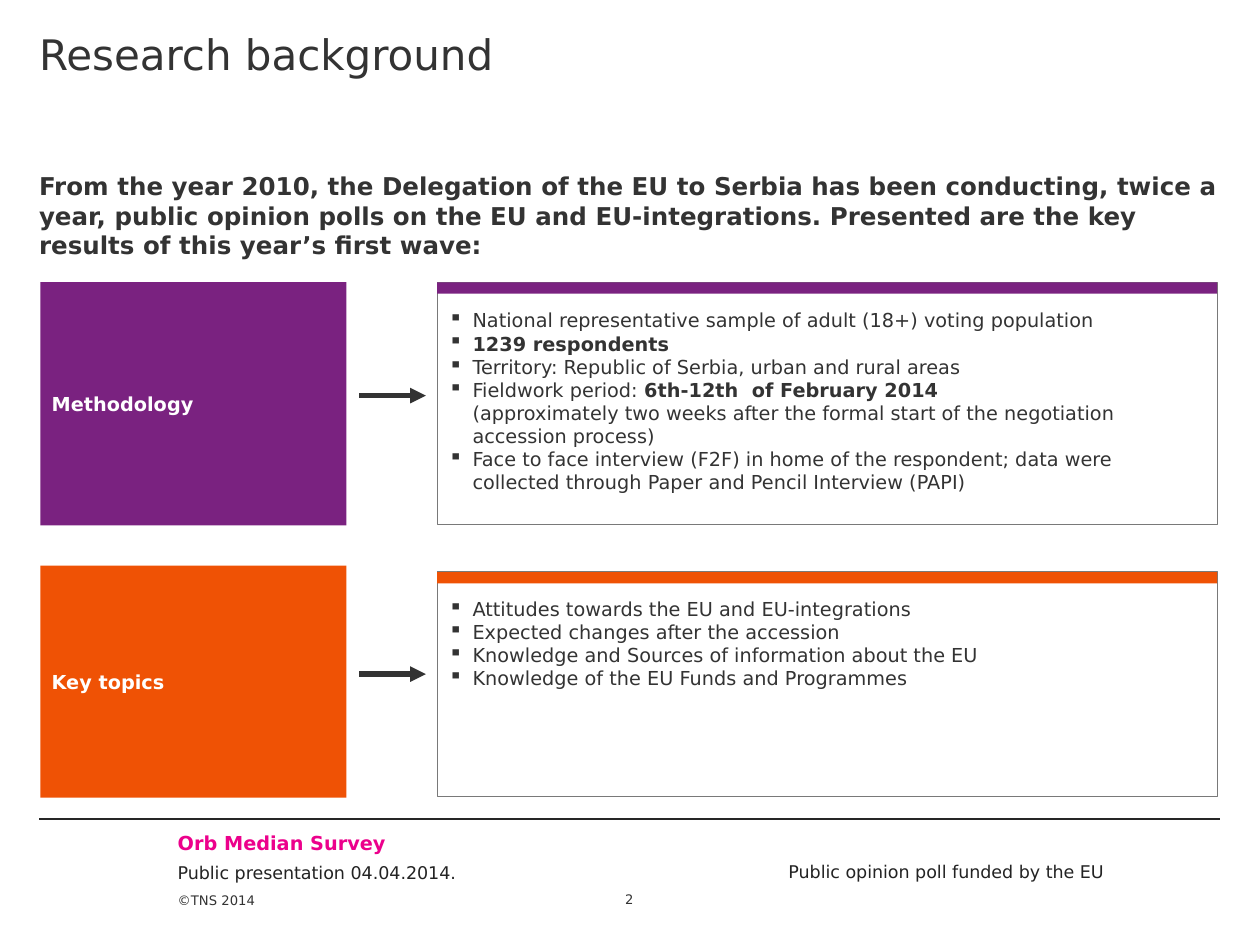
from copy import deepcopy
from pptx import Presentation
from pptx.dml.color import RGBColor
from pptx.enum.shapes import MSO_CONNECTOR, MSO_SHAPE
from pptx.enum.text import MSO_ANCHOR, MSO_AUTO_SIZE, PP_ALIGN
from pptx.oxml.ns import qn
from pptx.oxml.xmlchemy import OxmlElement
from pptx.util import Inches, Pt

RECT = MSO_SHAPE.RECTANGLE
LINE = MSO_CONNECTOR.STRAIGHT
TOP, MIDDLE, BOTTOM = MSO_ANCHOR.TOP, MSO_ANCHOR.MIDDLE, MSO_ANCHOR.BOTTOM
LEFT, CENTER, RIGHT = PP_ALIGN.LEFT, PP_ALIGN.CENTER, PP_ALIGN.RIGHT
FIXED = MSO_AUTO_SIZE.NONE

FONT = "DejaVu Sans"
DARK, WHITE, GRAY = "333333", "FFFFFF", "797979"
PURPLE, ORANGE, PINK = "7A2280", "EF5205", "EC008C"
INK, RULE = "232323", "262626"

INTRO = (
    "From the year 2010, the Delegation of the EU to Serbia has been conducting, "
    "twice a year, public opinion polls on the EU and EU-integrations. "
    "Presented are the key results of this year’s first wave:"
)
METHOD = [
    "National representative sample of adult (18+) voting population",
    "*1239 respondents*",
    "Territory: Republic of Serbia, urban and rural areas",
    "Fieldwork period: *6th-12th  of February 2014*\n"
    "(approximately two weeks after the formal start of the negotiation "
    "accession process)",
    "Face to face interview (F2F) in home of the respondent; data were "
    "collected through Paper and Pencil Interview (PAPI)",
]
TOPICS = [
    "Attitudes towards the EU and EU-integrations",
    "Expected changes after the accession",
    "Knowledge and Sources of information about the EU",
    "Knowledge of the EU Funds and Programmes",
]


def color(code):
    return RGBColor.from_string(code)


def place(shape, left, top, width, height):
    shape.left, shape.top = Inches(left), Inches(top)
    shape.width, shape.height = Inches(width), Inches(height)


def mark(para, bullet):
    props = para._p.get_or_add_pPr()
    indent = Inches(0.19) if bullet else 0
    props.set("marL", str(indent))
    props.set("indent", str(-indent))
    item = OxmlElement("a:buChar" if bullet else "a:buNone")
    if bullet:
        item.set("char", bullet)
    props.append(item)


def add_run(para, text, size, ink, bold):
    run = para.add_run()
    run.text = text
    font = run.font
    font.name, font.size, font.bold = FONT, Pt(size), bold
    font.color.rgb = color(ink)
    return run


def write(shape, lines, size=11, ink=DARK, bold=False, align=LEFT,
          anchor=TOP, inset=(0, 0, 0, 0), bullet=None):
    frame = shape.text_frame
    frame.word_wrap = True
    frame.auto_size = FIXED
    frame.vertical_anchor = anchor
    (frame.margin_left, frame.margin_top,
     frame.margin_right, frame.margin_bottom) = map(Inches, inset)
    for index, line in enumerate(lines):
        para = frame.add_paragraph() if index else frame.paragraphs[0]
        para.alignment = align
        para.space_before = Pt(0)
        mark(para, bullet)
        for part, text in enumerate(line.split("*")):
            for row, piece in enumerate(text.split("\n")):
                if row:
                    para.add_line_break()
                    gap = para._p.findall(qn("a:br"))[-1]
                    gap.append(deepcopy(run._r.rPr))
                if piece:
                    run = add_run(para, piece, size, ink, bold or part % 2 == 1)


def add_label(slide, area, text, **style):
    box = slide.shapes.add_textbox(*map(Inches, area))
    write(box, [text], **style)


def add_box(slide, area, fill, edge=None):
    box = slide.shapes.add_shape(RECT, *map(Inches, area))
    box.shadow.inherit = False
    box.fill.solid()
    box.fill.fore_color.rgb = color(fill)
    if edge:
        box.line.color.rgb = color(edge)
        box.line.width = Pt(0.25)
    else:
        box.line.fill.background()
    return box


def add_line(slide, start, end, y, ink, width, arrow=False):
    line = slide.shapes.add_connector(
        LINE, Inches(start), Inches(y), Inches(end), Inches(y))
    line.line.color.rgb = color(ink)
    line.line.width = Pt(width)
    if arrow:
        tip = OxmlElement("a:tailEnd")
        tip.set("type", "triangle")
        line.line._get_or_add_ln().append(tip)
    line._element.spPr.append(OxmlElement("a:effectLst"))


def add_block(slide, name, items, ink, head, panel, bar, arrow):
    pad = 0.09
    left, width = 3.47, 6.19
    body = add_box(slide, (left, panel[0], width, panel[1]), WHITE, GRAY)
    write(body, items, inset=(pad, 0.21, pad, 0.04), bullet="▪")
    add_box(slide, (left, bar, width, 0.09), ink)
    label = add_box(slide, (0.32, head[0], 2.43, head[1]), ink)
    write(label, [name], ink=WHITE, bold=True, anchor=MIDDLE,
          inset=(pad, 0.04, pad, 0.04))
    add_line(slide, 2.85, 3.38, arrow, DARK, 3, arrow=True)


def add_footer(slide):
    add_line(slide, 0.31, 9.68, 6.5, RULE, 0.75)
    add_label(slide, (1.41, 6.6, 3.31, 0.19), "Orb Median Survey",
              ink=PINK, bold=True)
    add_label(slide, (1.41, 6.84, 3.4, 0.17),
              "Public presentation 04.04.2014.", size=10, ink=INK)
    add_label(slide, (5.36, 6.83, 3.4, 0.17),
              "Public opinion poll funded by the EU",
              size=10, ink=INK, align=RIGHT)
    add_label(slide, (1.41, 6.92, 0.83, 0.58), "©TNS 2014",
              size=7.5, anchor=BOTTOM, inset=(0, 0, 0, 0.29))
    add_label(slide, (4.72, 6.92, 0.55, 0.28), "2",
              size=7.5, align=CENTER, anchor=BOTTOM)


def main():
    deck = Presentation()
    deck.slide_width, deck.slide_height = Inches(10), Inches(7.5)
    slide = deck.slides.add_slide(deck.slide_layouts[1])
    title, intro = slide.placeholders
    place(title, 0.31, 0, 9.37, 1.13)
    write(title, ["Research background"], size=24, inset=(0, 0.23, 0, 0))
    place(intro, 0.31, 1.13, 9.37, 0.83)
    write(intro, [INTRO], size=14, bold=True, inset=(0, 0.23, 0, 0))
    add_block(slide, "Key topics", TOPICS, ORANGE, head=(4.49, 1.84),
              panel=(4.53, 1.79), bar=4.54, arrow=5.35)
    add_block(slide, "Methodology", METHOD, PURPLE, head=(2.24, 1.93),
              panel=(2.24, 1.92), bar=2.24, arrow=3.14)
    add_footer(slide)
    deck.save("out.pptx")


if __name__ == "__main__":
    main()
